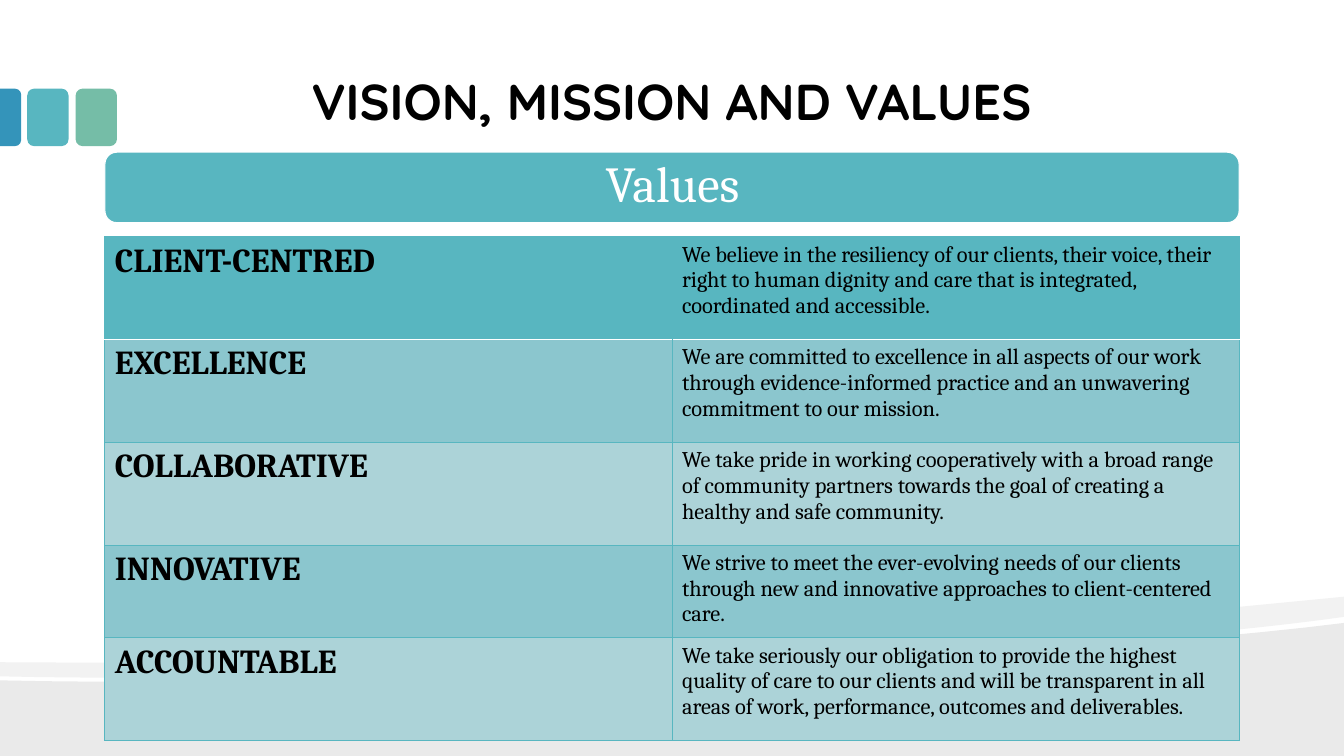
import pptx
import pptx.util
import pptx.dml.color
import pptx.enum.shapes
import pptx.enum.text
import pptx.oxml
import pptx.oxml.ns
from dataclasses import dataclass
from pptx.util import Inches

# Content
TITLE = "VISION, MISSION AND VALUES"
BANNER = "Values"
VALUES = [
    ("CLIENT-CENTRED", "We believe in the resiliency of our clients, their voice, their right to "
     "human dignity and care that is integrated, coordinated and accessible."),
    ("EXCELLENCE", "We are committed to excellence in all aspects of our work through "
     "evidence-informed practice and an unwavering commitment to our mission."),
    ("COLLABORATIVE", "We take pride in working cooperatively with a broad range of community "
     "partners towards the goal of creating a healthy and safe community."),
    ("INNOVATIVE", "We strive to meet the ever-evolving needs of our clients through new and "
     "innovative approaches to client-centered care."),
    ("ACCOUNTABLE", "We take seriously our obligation to provide the highest quality of care to "
     "our clients and will be transparent in all areas of work, performance, outcomes and "
     "deliverables."),
]
ROW_HEIGHTS = [1.02, 1.02, 1.02, 0.92, 1.02]


@dataclass(frozen=True)
class Theme:
    heading_font: str = "Quicksand"
    body_font: str = "Cambria"
    heading_size: int = 36
    name_size: int = 24
    text_size: int = 16
    black: str = "000000"
    white: str = "FFFFFF"
    teal: str = "58B6C0"
    teal_mid: str = "8BC6CE"
    teal_pale: str = "ACD3D8"
    green: str = "75BDA7"
    blue: str = "3494BA"
    wave: str = "EAEAEA"
    ribbon: str = "F2F2F2"


THEME = Theme()
SHAPE = pptx.enum.shapes.MSO_SHAPE
ANCHOR = pptx.enum.text.MSO_ANCHOR
CENTER = pptx.enum.text.PP_ALIGN.CENTER

# Hills: a start point, then line points (2 numbers) or Bezier curves (6 numbers)
WAVE = [(13.33, 6.18), (13.33, 7.5), (0, 7.5), (0, 6.75),
        (3.52, 6.83, 10.42, 6.55, 13.33, 6.18)]
RIBBON = [(13.33, 5.92), (13.33, 6.12), (12.55, 6.23, 11.49, 6.33, 10.29, 6.41),
          (6.98, 6.63, 2.58, 6.77, 0, 6.71), (0, 6.57),
          (6.52, 6.62, 9.71, 6.27, 13.33, 5.92)]


def rgb(color):
    return pptx.dml.color.RGBColor.from_string(color)


def write(frame, text, size, font=THEME.body_font, color=THEME.black, bold=False,
          align=None, spacing=None):
    para = frame.paragraphs[0]
    para.alignment = align
    para.line_spacing = spacing
    span = para.add_run()
    span.text = text
    span.font.name = font
    span.font.size = pptx.util.Pt(size)
    span.font.bold = bold
    span.font.color.rgb = rgb(color)


def set_frame(frame, anchor, side, top):
    frame.word_wrap = True
    frame.vertical_anchor = anchor
    frame.margin_left = frame.margin_right = Inches(side)
    frame.margin_top = frame.margin_bottom = Inches(top)


def paint(shape, color, line=None):
    shape.shadow.inherit = False
    shape.fill.solid()
    shape.fill.fore_color.rgb = rgb(color)
    if line:
        shape.line.color.rgb = rgb(line)
        shape.line.width = pptx.util.Pt(0.85)
    else:
        shape.line.fill.background()


def add_block(page, kind, place, color, line=None):
    shape = page.shapes.add_shape(kind, *map(Inches, place))
    paint(shape, color, line)
    return shape


def trace(outline, steps=24):
    """Turn the outline into points, sampling each curve evenly."""
    points = [outline[0]]
    for part in outline[1:]:
        if len(part) == 2:
            points.append(part)
            continue
        knots = [points[-1], part[0:2], part[2:4], part[4:6]]
        for step in range(1, steps + 1):
            t = step / steps
            weights = ((1 - t) ** 3, 3 * t * (1 - t) ** 2, 3 * t * t * (1 - t), t ** 3)
            points.append(tuple(sum(w * knot[axis] for w, knot in zip(weights, knots))
                                for axis in (0, 1)))
    return points


def add_hill(page, outline, color):
    points = [(Inches(x), Inches(y)) for x, y in trace(outline)]
    builder = page.shapes.build_freeform(*points[0])
    builder.add_line_segments(points[1:], close=True)
    paint(builder.convert_to_shape(), color)


def set_border(cell, side, color, width):
    properties = cell._tc.get_or_add_tcPr()
    fill = (f'<a:solidFill><a:srgbClr val="{color}"/></a:solidFill>' if color
            else "<a:noFill/>")
    properties.append(pptx.oxml.parse_xml(
        f'<a:ln{side} {pptx.oxml.ns.nsdecls("a")} w="{pptx.util.Pt(width)}">'
        f"{fill}</a:ln{side}>"))


def add_values_table(page):
    table = page.shapes.add_table(len(VALUES), 2, Inches(1.04), Inches(2.35),
                                  Inches(11.25), Inches(sum(ROW_HEIGHTS))).table
    for column in table.columns:
        column.width = Inches(5.625)
    for i, (entry, height) in enumerate(zip(VALUES, ROW_HEIGHTS)):
        table.rows[i].height = Inches(height)
        color = THEME.teal if i == 0 else (THEME.teal_pale, THEME.teal_mid)[i % 2]
        for j, text in enumerate(entry):
            cell = table.cell(i, j)
            write(cell.text_frame, text, (THEME.name_size, THEME.text_size)[j], bold=j == 0)
            # The first row has no inner divider and a white rule below it
            inner = "R" if j == 0 else "L"
            for side in "LRTB":
                hidden = i == 0 and side == inner
                white = (i, side) in ((0, "B"), (1, "T"))
                set_border(cell, side,
                           None if hidden else THEME.white if white else THEME.teal,
                           0.85 if white else 0.75)
            cell.fill.solid()
            cell.fill.fore_color.rgb = rgb(color)


def main():
    deck = pptx.Presentation()
    deck.slide_width, deck.slide_height = Inches(13.33), Inches(7.5)
    page = deck.slides.add_slide(deck.slide_layouts[5])

    # Background hills
    add_hill(page, WAVE, THEME.wave)
    add_hill(page, RIBBON, THEME.ribbon)

    # Tabs at the left edge
    for left, color in ((0.75, THEME.green), (0.27, THEME.teal)):
        add_block(page, SHAPE.ROUNDED_RECTANGLE, (left, 0.88, 0.41, 0.57), color)
    edge_tab = add_block(page, SHAPE.ROUND_2_SAME_RECTANGLE, (-0.18, 1.06, 0.57, 0.21), THEME.blue)
    edge_tab.rotation = 90
    edge_tab.adjustments[0] = 0.29

    # Title
    title = page.shapes.title
    title.left, title.top, title.width, title.height = map(Inches, (1.33, 0.17, 10.66, 1.2))
    set_frame(title.text_frame, ANCHOR.BOTTOM, 0.13, 0.07)
    write(title.text_frame, TITLE, THEME.heading_size, font=THEME.heading_font, bold=True,
          align=CENTER)

    # Values table
    add_values_table(page)

    # Banner
    add_block(page, SHAPE.ROUNDED_RECTANGLE, (1.04, 1.51, 11.25, 0.7), THEME.teal, THEME.white)
    box = page.shapes.add_textbox(*map(Inches, (1.09, 1.36, 11.16, 0.97)))
    set_frame(box.text_frame, ANCHOR.MIDDLE, 0.15, 0.15)
    write(box.text_frame, BANNER, THEME.heading_size, color=THEME.white, align=CENTER,
          spacing=0.9)

    deck.save("out.pptx")


if __name__ == "__main__":
    main()
